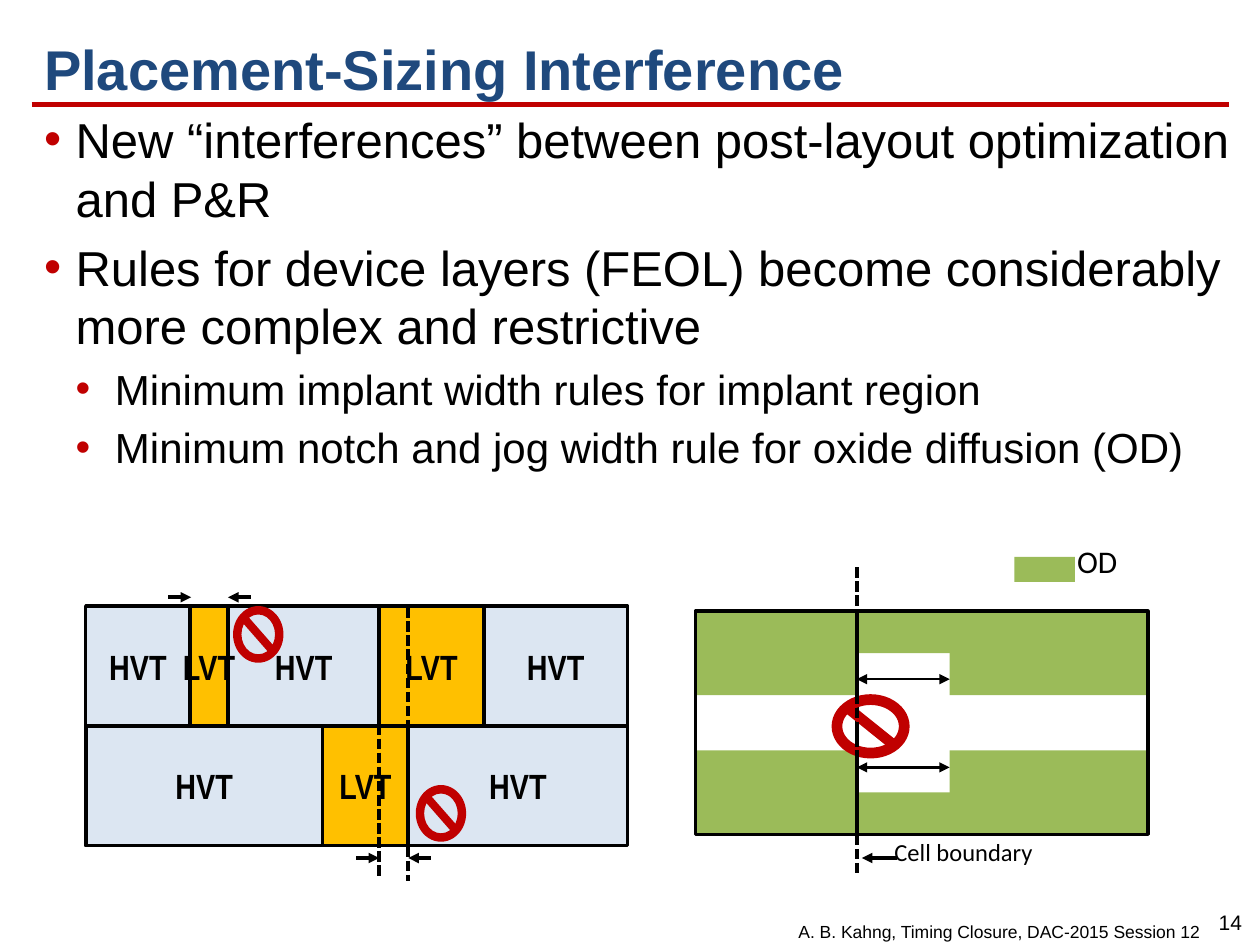
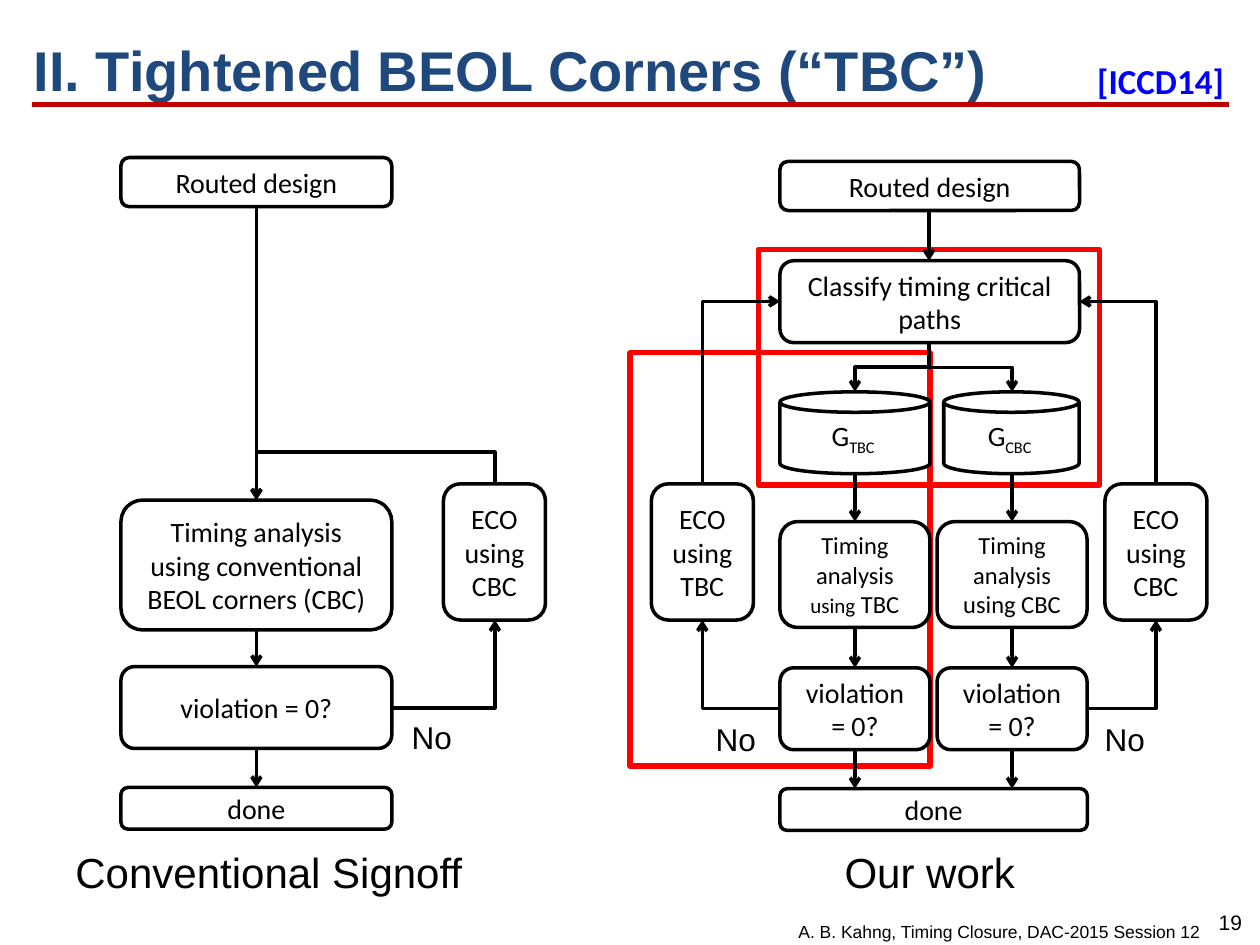
from dataclasses import dataclass
from itertools import pairwise, product

from lxml.etree import SubElement
from pptx import Presentation
from pptx.dml.color import RGBColor as RGB
from pptx.enum.dml import MSO_LINE as DASH
from pptx.enum.shapes import MSO_CONNECTOR as LINK, MSO_SHAPE as SHAPE
from pptx.enum.text import MSO_ANCHOR as ANCHOR, MSO_AUTO_SIZE as FIT, PP_ALIGN as ALIGN
from pptx.oxml.ns import qn
from pptx.util import Pt


@dataclass(frozen=True)
class Theme:
    """Colours, fonts and type sizes of the deck."""
    ink: str = "000000"
    paper: str = "FFFFFF"
    navy: str = "1F497D"
    crimson: str = "C00000"
    highlight: str = "FF0000"
    citation: str = "0000FF"
    hvt: str = "DCE6F2"
    lvt: str = "FFC000"
    diffusion: str = "9BBB59"
    sans: str = "Arial"
    narrow: str = "Arial Narrow"
    diagram: str = "Calibri"
    title: int = 32
    bullet: int = 28
    caption: int = 24
    label: int = 20
    answer: int = 18
    step: int = 16
    small: int = 14
    tiny: int = 12
    credit: int = 10


T = Theme()


def write(shape, text, font=T.sans, size=T.answer, color=T.ink, bold=False,
          align=ALIGN.LEFT, anchor=ANCHOR.TOP, wrap=True):
    """Fill a shape with lines of text, or with one line of (text, size, baseline) runs."""
    frame = shape.text_frame
    frame.auto_size = FIT.NONE
    frame.word_wrap = wrap
    frame.vertical_anchor = anchor
    lines = [[(line, size, 0)] for line in text.split("\n")] if isinstance(text, str) else [text]
    for index, runs in enumerate(lines):
        paragraph = frame.add_paragraph() if index else frame.paragraphs[0]
        paragraph.alignment = align
        for words, run_size, baseline in runs:
            run = paragraph.add_run()
            run.text = words
            run.font.name = font
            run.font.size = Pt(run_size)
            run.font.bold = bold
            run.font.color.rgb = RGB.from_string(color)
            if baseline:
                run.font._element.set("baseline", str(baseline * 1000))


def place(shape, left, top, width, height):
    """Move a placeholder to a box."""
    shape.left, shape.top, shape.width, shape.height = map(Pt, (left, top, width, height))


def label(slide, box, text, **format):
    """Add a text box."""
    write(slide.shapes.add_textbox(*map(Pt, box)), text, **format)


def block(slide, box, kind=SHAPE.RECTANGLE, fill=None, line=None, weight=2):
    """Add a flat preset shape."""
    shape = slide.shapes.add_shape(kind, *map(Pt, box))
    shape.shadow.inherit = False
    if fill:
        shape.fill.solid()
        shape.fill.fore_color.rgb = RGB.from_string(fill)
    else:
        shape.fill.background()
    if line:
        shape.line.color.rgb = RGB.from_string(line)
        shape.line.width = Pt(weight)
    else:
        shape.line.fill.background()
    return shape


def step(slide, box, text, kind=SHAPE.ROUNDED_RECTANGLE, size=T.step):
    """Add a flowchart step."""
    shape = block(slide, box, kind, T.paper, T.ink)
    write(shape, text, font=T.diagram, size=size, align=ALIGN.CENTER, anchor=ANCHOR.MIDDLE)


def forbidden(slide, box):
    """Add a prohibition sign."""
    block(slide, box, SHAPE.NO_SYMBOL, T.crimson).adjustments[0] = 0.167


def link(slide, start, end, kind=LINK.STRAIGHT, color=T.ink, weight=2,
         dashed=False, head=None, tail=None):
    """Add a connector with optional dashes and arrowheads."""
    connector = slide.shapes.add_connector(kind, *map(Pt, (*start, *end)))
    connector.line.color.rgb = RGB.from_string(color)
    connector.line.width = Pt(weight)
    if dashed:
        connector.line.dash_style = DASH.SQUARE_DOT
    outline = connector.line._get_or_add_ln()
    for tag, arrow in (("a:headEnd", head), ("a:tailEnd", tail)):
        if arrow:
            SubElement(outline, qn(tag), type=arrow)
    SubElement(connector._element.spPr, qn("a:effectLst"))
    return connector


def elbow(slide, start, end, vertical=False, bend=None):
    """Add an arrow with one corner, or two when the bend ratio is given."""
    (x1, y1), (x2, y2) = start, end
    if vertical:
        x, y, dx, dy = (x1 + x2) / 2, (y1 + y2) / 2, (x2 - x1) / 2, (y2 - y1) / 2
        start, end = (x - dy, y + dx), (x + dy, y - dx)
    properties = link(slide, start, end, LINK.ELBOW, tail="arrow")._element.spPr
    if vertical:
        properties.find(qn("a:xfrm")).set("rot", "5400000")
    geometry = properties.find(qn("a:prstGeom"))
    if bend is None:
        geometry.set("prst", "bentConnector2")
    else:
        SubElement(geometry.find(qn("a:avLst")), qn("a:gd"), name="adj1",
                   fmla=f"val {round(bend * 100000)}")


def new_slide(deck, layout, title, title_box, number):
    """Add a slide with its title, rule, credit and page number."""
    slide = deck.slides.add_slide(deck.slide_layouts[layout])
    link(slide, (18, 59.8), (702, 59.8), color=T.crimson, weight=3)
    label(slide, (688.3, 516.2, 29.5, 21.6), number, size=T.tiny, align=ALIGN.CENTER, wrap=False)
    label(slide, (404.6, 522.7, 288, 19.4), "A. B. Kahng, Timing Closure, DAC-2015 Session 12",
          size=T.credit, align=ALIGN.RIGHT)
    place(slide.shapes.title, *title_box)
    write(slide.shapes.title, title, size=T.title, color=T.navy, bold=True, anchor=ANCHOR.MIDDLE)
    return slide


def bullets(body, items):
    """Fill the body placeholder with (level, text) bullets."""
    write(body, "\n".join(text for _, text in items))
    for paragraph, (level, _) in zip(body.text_frame.paragraphs, items):
        paragraph.level = level
        paragraph.runs[0].font.size = Pt((T.bullet, T.caption)[level])
        margin, hanging = ((18, 18), (40.5, 22.5))[level]
        properties = paragraph._p.get_or_add_pPr()
        properties.set("marL", str(Pt(margin)))
        properties.set("indent", str(-Pt(hanging)))
        SubElement(SubElement(properties, qn("a:buClr")), qn("a:srgbClr"), val=T.crimson)
        SubElement(properties, qn("a:buFont"), typeface=T.sans)
        SubElement(properties, qn("a:buChar"), char="•")


def implant_rows(slide):
    """Draw two rows of alternating HVT and LVT cells and their width violations."""
    top, height = 346.3, 68.5
    rows = [(49, 108.7, 130.3, 216.7, 276.5, 358.6), (49, 184.3, 233.3, 358.6)]
    implants = [("HVT", T.hvt), ("LVT", T.lvt)]
    for (parity, (name, fill)), (row, edges) in product(enumerate(implants), enumerate(rows)):
        for left, right in list(pairwise(edges))[parity::2]:
            cell = block(slide, (left, top + row * height, right - left, height),
                         fill=fill, line=T.ink)
            write(cell, name, font=T.narrow, size=T.label, bold=True,
                  align=ALIGN.CENTER, anchor=ANCHOR.MIDDLE, wrap=False)
    for x, start, end in ((216.7, 414, 501.8), (233.3, 347, 503.3)):
        link(slide, (x, start), (x, end), dashed=True)
    for left, right, y in ((216.7, 233.3, 490.3), (109.2, 130.3, 341.3)):
        link(slide, (left - 13, y), (left, y), tail="triangle")
        link(slide, (right + 13, y), (right, y), tail="triangle")
    for left, y in ((133.2, 346.3), (237.6, 448.6)):
        forbidden(slide, (left, y, 28.8, 32.4))


def diffusion_cells(slide):
    """Draw two abutting cells whose oxide diffusion forms a notch."""
    left, boundary, notch, right = 397.4, 489.6, 542.7, 655.9
    top, bottom, strip, thin = 349.2, 476.8, 48, 24
    for strip_top, thin_top in ((top, top), (bottom - strip, bottom - thin)):
        for x, y, end, height in ((left, strip_top, boundary, strip),
                                  (notch, strip_top, right, strip),
                                  (boundary + 1.2, thin_top, notch + 6, thin)):
            block(slide, (x, y, end - x, height), fill=T.diffusion)
    for start, end in pairwise((left, boundary, right)):
        block(slide, (start, top, end - start, bottom - top), line=T.ink)
    for y in (388.1, 438.5):
        link(slide, (boundary, y), (notch, y), weight=1.5, head="triangle", tail="triangle")
    forbidden(slide, (475.2, 396.7, 44.6, 36.7))
    label(slide, (608.4, 306, 60.5, 38.9), "OD", font=T.diagram, wrap=False)
    block(slide, (579.6, 318.2, 34.6, 14.4), fill=T.diffusion)
    link(slide, (boundary, 324), (boundary, 499.7), dashed=True)
    label(slide, (504, 474.5, 174.2, 32.4), "Cell boundary", font=T.diagram, size=T.small)
    link(slide, (512.6, 490.3), (492.5, 490.3), tail="triangle")


def eco(slide, left, corners):
    """Add an engineering change step."""
    step(slide, (left, 276.5, 58.3, 77.8), f"ECO\nusing {corners}")


def descend(slide, x, spans):
    """Add downward arrows along one column."""
    for start, end in spans:
        link(slide, (x, start), (x, end), tail="arrow")


def answer_no(slide, left, top):
    """Label the branch taken when violations remain."""
    label(slide, (left, top, 41.8, 21.6), "No", wrap=False)


def conventional_flow(slide):
    """Draw the conventional signoff flow."""
    left, width, middle, eco_middle = 69.1, 154.8, 146.5, 282.8
    steps = [(90, 28.1, "Routed design"),
             (285.8, 74.2, "Timing analysis using conventional BEOL corners (CBC)"),
             (380.9, 46.8, "violation = 0?"), (450, 23.8, "done")]
    for top, height, text in steps:
        step(slide, (left, top, width, height), text)
    descend(slide, middle, [(top + height, following)
                            for (top, height, _), (following, *_) in pairwise(steps)])
    eco(slide, 253.4, "CBC")
    elbow(slide, (eco_middle, 276.5), (middle, 285.8), vertical=True, bend=-1.95)
    elbow(slide, (left + width, 404.6), (eco_middle, 354.3))
    answer_no(slide, 228.2, 406.8)
    label(slide, (36, 480.2, 246.2, 36), "Conventional Signoff", size=T.caption, wrap=False)


def tightened_flow(slide):
    """Draw the flow that splits paths between tightened and conventional corners."""
    left, width, middle, branch = 445.7, 171.2, 530.9, 85.7
    for box in ((433.4, 142.6, 195.1, 134.6), (360, 201.6, 171.4, 236.2)):
        block(slide, box, line=T.highlight, weight=3)
    step(slide, (left, 92.2, width, 28.1), "Routed design")
    step(slide, (left, 149, width, 46.8), "Classify timing critical paths")
    step(slide, (left, 450.7, 175.7, 23.8), "done")
    descend(slide, middle, [(120.3, 149)])
    tbc_analysis = [("Timing analysis ", T.small, 0), ("using", T.tiny, 0), (" TBC", T.small, 0)]
    branches = [("TBC", left, left, branch, tbc_analysis, 372.2, left, left, 401.8),
                ("CBC", 535.5, 539.3, 77.3, "Timing analysis using CBC", 631.4,
                 left + width, 535.5 + branch, 624.2)]
    for corners, x, can_x, can_width, analysis, eco_x, classify_x, check_x, no_x in branches:
        center, eco_middle = x + branch / 2, eco_x + 29.15
        step(slide, (can_x, 223.9, can_width, 46.8),
             [("G", T.step, 0), (corners + " ", T.step, -25)], kind=SHAPE.CAN)
        step(slide, (x, 298.1, branch, 60.5), analysis, size=T.small)
        step(slide, (x, 381.6, branch, 46.8), "violation = 0?")
        eco(slide, eco_x, corners)
        elbow(slide, (middle, 195.8), (center, 223.9), vertical=True, bend=0.5)
        descend(slide, center, [(270.7, 298.1), (358.6, 381.6), (428.4, 450.7)])
        elbow(slide, (check_x, 405), (eco_middle, 354.3))
        elbow(slide, (eco_middle, 276.5), (classify_x, 172.3), vertical=True)
        answer_no(slide, no_x, 408.2)
    label(slide, (408.2, 480.2, 246.2, 36), "Our work", size=T.caption,
          align=ALIGN.CENTER, wrap=False)


def main():
    """Build both slides and save the deck."""
    deck = Presentation()
    deck.slide_width, deck.slide_height = Pt(720), Pt(540)

    interference = new_slide(deck, 1, "Placement-Sizing Interference", (18, 12.2, 684, 54), "14")
    rules = interference.placeholders[1]
    place(rules, 18, 59, 702, 432)
    bullets(rules, [
        (0, "New “interferences” between post-layout optimization and P&R"),
        (0, "Rules for device layers (FEOL) become considerably more complex and restrictive"),
        (1, "Minimum implant width rules for implant region"),
        (1, "Minimum notch and jog width rule for oxide diffusion (OD)")])
    implant_rows(interference)
    diffusion_cells(interference)

    corners = new_slide(deck, 5, "II. Tightened BEOL Corners (“TBC”)",
                        (12.2, 17.3, 714.2, 44.6), "19")
    conventional_flow(corners)
    tightened_flow(corners)
    label(corners, (619.9, 30.2, 87.8, 31.7), "[ICCD14]", font=T.diagram, size=T.label,
          color=T.citation, bold=True, wrap=False)
    deck.save("out.pptx")


if __name__ == "__main__":
    main()
